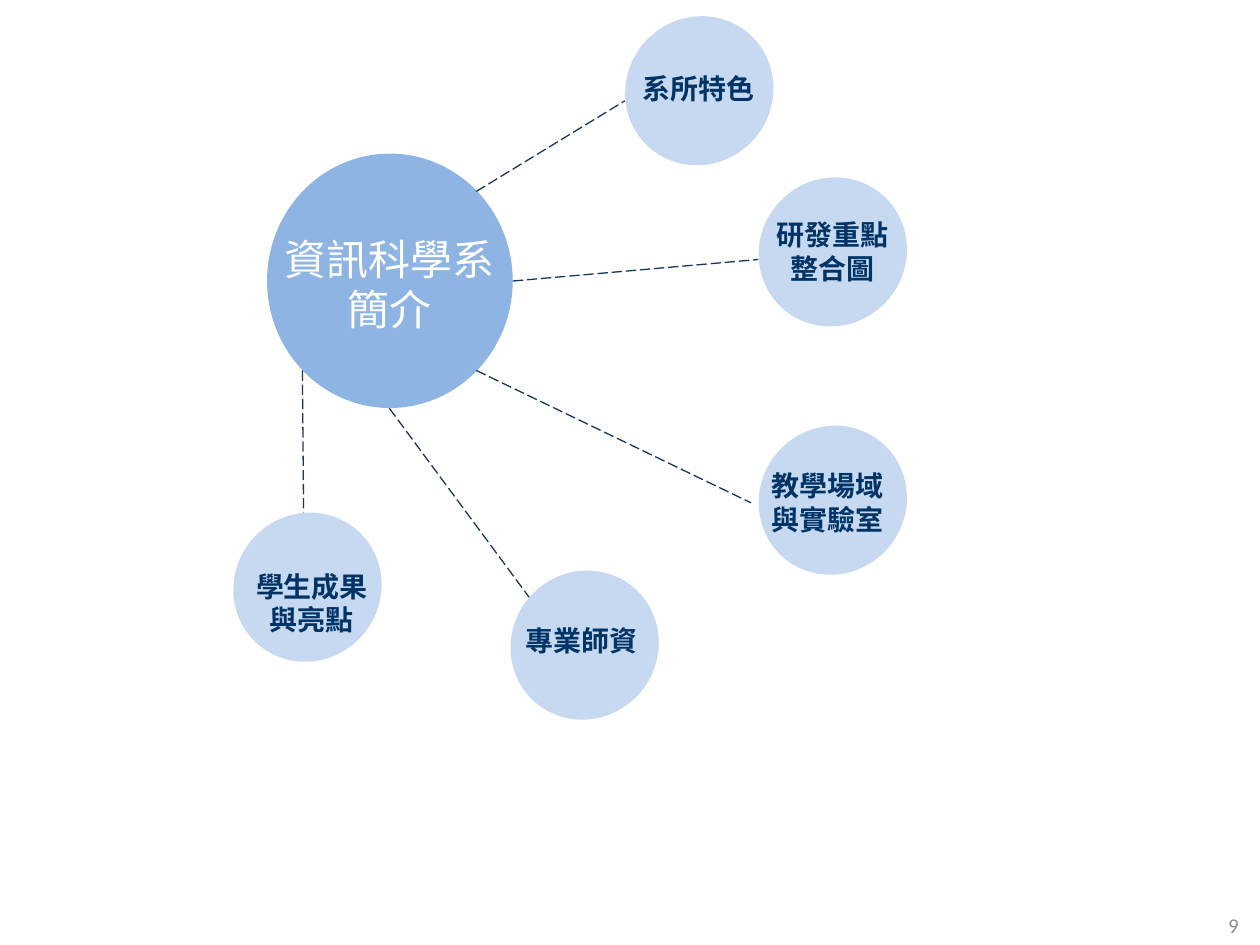
import pptx
import pptx.util
import pptx.dml.color
import pptx.enum.dml
import pptx.enum.shapes
import pptx.enum.text
import pptx.oxml.ns
import lxml.etree

Pt = pptx.util.Pt
RGB = pptx.dml.color.RGBColor
ALIGN = pptx.enum.text.PP_ALIGN
ANCHOR = pptx.enum.text.MSO_ANCHOR
FIT = pptx.enum.text.MSO_AUTO_SIZE

PALE = RGB(0xC6, 0xD9, 0xF1)
BLUE = RGB(0x8E, 0xB4, 0xE3)
DARK = RGB(0x17, 0x37, 0x5E)
NAVY = RGB(0x00, 0x33, 0x66)
WHITE = RGB(0xFF, 0xFF, 0xFF)
GRAY = RGB(0x8C, 0x8C, 0x8C)
CJK = "Noto Sans CJK SC"
LATIN = "Calibri"

TOPICS = [
    ((132.5, 293.8), "學生成果與亮點", (136.8, 321.8, 82.8, 46.1)),
    ((290.9, 326.9), "專業師資", (283, 352.8, 98.6, 26.6)),
    ((432.7, 244.1), "教學場域\n與實驗室", (429.1, 264.2, 87.8, 46.1)),
    ((432.7, 102.2), "研發重點整合圖", (434.9, 121, 81.4, 46.1)),
    ((356.4, 10.1), "系所特色", (358.6, 37.4, 81.4, 26.6)),
]
SPOKES = [
    (272.2, 109.4, 357.1, 57.6),
    (293, 160.6, 433.4, 148.3),
    (272.2, 211.7, 429.1, 287.3),
    (222.5, 233.3, 302.4, 341.3),
    (172.8, 211.7, 173.5, 293),
]


def write(frame, text, size=16, color=NAVY, bold=False, font=CJK, align=ALIGN.CENTER):
    for num, line in enumerate(text.split("\n")):
        para = frame.add_paragraph() if num else frame.paragraphs[0]
        para.alignment = align
        run = para.add_run()
        run.text = line
        run.font.size = Pt(size)
        run.font.bold = bold
        run.font.name = font
        run.font.color.rgb = color
        east = lxml.etree.SubElement(run.font._element, pptx.oxml.ns.qn("a:ea"))
        east.set("typeface", font)


class Sheet:
    def __init__(self, slide):
        self.slide = slide
        self.shapes = slide.shapes

    def disc(self, left, top, wide, high, fill, turn=0):
        kind = pptx.enum.shapes.MSO_SHAPE.OVAL
        disc = self.shapes.add_shape(kind, Pt(left), Pt(top), Pt(wide), Pt(high))
        disc.rotation = turn
        disc.shadow.inherit = False
        disc.fill.solid()
        disc.fill.fore_color.rgb = fill
        disc.line.fill.background()

    def spoke(self, *ends):
        kind = pptx.enum.shapes.MSO_CONNECTOR.STRAIGHT
        spoke = self.shapes.add_connector(kind, *map(Pt, ends))
        spoke.line.color.rgb = DARK
        spoke.line.width = Pt(0.75)
        spoke.line.dash_style = pptx.enum.dml.MSO_LINE.LONG_DASH
        props = spoke._element.spPr
        lxml.etree.SubElement(props, pptx.oxml.ns.qn("a:effectLst"))

    def label(self, area, text, anchor=ANCHOR.TOP, fit=FIT.SHAPE_TO_FIT_TEXT, **style):
        frame = self.shapes.add_textbox(*map(Pt, area)).text_frame
        frame.word_wrap = True
        frame.auto_size = fit
        frame.vertical_anchor = anchor
        write(frame, text, **style)


def main():
    deck = pptx.Presentation()
    deck.slide_width, deck.slide_height = Pt(720), Pt(540)
    sheet = Sheet(deck.slides.add_slide(deck.slide_layouts[6]))

    for spot, _, _ in TOPICS:
        sheet.disc(*spot, 86.4, 83.5, PALE, turn=310.4)
    sheet.disc(152.6, 87.8, 140.4, 145.4, BLUE)
    for ends in SPOKES:
        sheet.spoke(*ends)
    for _, text, area in TOPICS:
        sheet.label(area, text, bold=True)
    sheet.label((152.6, 129.6, 140.4, 65.5), "資訊科學系簡介", size=24, color=WHITE)
    sheet.label((547.2, 514.1, 167.8, 28.8), "9", anchor=ANCHOR.MIDDLE, fit=FIT.NONE,
                size=12, color=GRAY, font=LATIN, align=ALIGN.RIGHT)
    deck.save("out.pptx")


if __name__ == "__main__":
    main()
